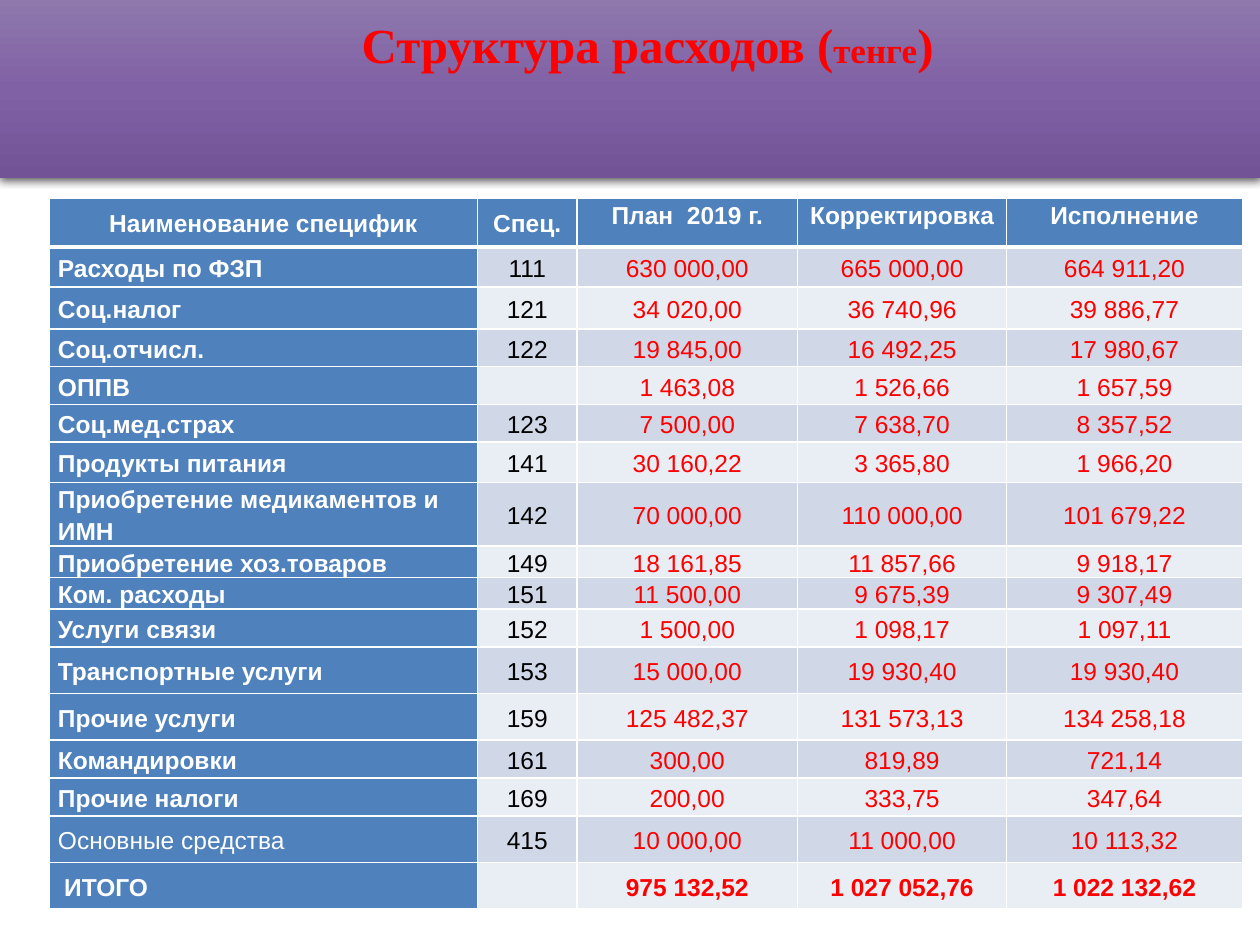
import copy

import pptx
import pptx.dml.color
import pptx.enum.shapes
import pptx.enum.text
import pptx.oxml
import pptx.oxml.ns
import pptx.util
from pptx.util import Inches

RGBColor = pptx.dml.color.RGBColor
PP_ALIGN = pptx.enum.text.PP_ALIGN
MSO_ANCHOR = pptx.enum.text.MSO_ANCHOR

WHITE = RGBColor(0xFF, 0xFF, 0xFF)
BLACK = RGBColor(0x00, 0x00, 0x00)
RED = RGBColor(0xFF, 0x00, 0x00)
BLUE = RGBColor(0x4F, 0x81, 0xBD)
BAND_DARK = RGBColor(0xD0, 0xD8, 0xE8)
BAND_LIGHT = RGBColor(0xE9, 0xED, 0xF4)
BANNER_STOPS = [
    (0, RGBColor(0x8E, 0x78, 0xAC)),
    (0.5, RGBColor(0x80, 0x61, 0xA5)),
    (1, RGBColor(0x71, 0x53, 0x96)),
]

COLUMN_WIDTHS = [3.4, 0.79, 1.75, 1.66, 1.87]
HEADINGS = ["Наименование специфик", "Спец.", "План  2019 г.", "Корректировка", "Исполнение"]
HEADING_HEIGHT = 0.39
TOTAL = "ИТОГО"
PLAIN_NAME = "Основные средства"
EXPENSES = [
    (0.32, "Расходы по ФЗП", "111", "630 000,00", "665 000,00", "664 911,20"),
    (0.33, "Соц.налог", "121", "34 020,00", "36 740,96", "39 886,77"),
    (0.3, "Соц.отчисл.", "122", "19 845,00", "16 492,25", "17 980,67"),
    (0.3, "ОППВ", "", "1 463,08", "1 526,66", "1 657,59"),
    (0.3, "Соц.мед.страх", "123", "7 500,00", "7 638,70", "8 357,52"),
    (0.32, "Продукты питания", "141", "30 160,22", "3 365,80", "1 966,20"),
    (0.38, "Приобретение медикаментов и ИМН", "142", "70 000,00", "110 000,00", "101 679,22"),
    (0.25, "Приобретение хоз.товаров", "149", "18 161,85", "11 857,66", "9 918,17"),
    (0.25, "Ком. расходы", "151", "11 500,00", "9 675,39", "9 307,49"),
    (0.3, "Услуги связи", "152", "1 500,00", "1 098,17", "1 097,11"),
    (0.37, "Транспортные услуги", "153", "15 000,00", "19 930,40", "19 930,40"),
    (0.37, "Прочие услуги", "159", "125 482,37", "131 573,13", "134 258,18"),
    (0.3, "Командировки", "161", "300,00", "819,89", "721,14"),
    (0.3, "Прочие налоги", "169", "200,00", "333,75", "347,64"),
    (0.37, PLAIN_NAME, "415", "10 000,00", "11 000,00", "10 113,32"),
    (0.37, TOTAL, "", "975 132,52", "1 027 052,76", "1 022 132,62"),
]


def apply_format(target, values):
    for attribute, value in values.items():
        setattr(target, attribute, value)


def element(xml):
    return pptx.oxml.parse_xml(xml.replace(">", f" {pptx.oxml.ns.nsdecls('a')}>", 1))


class SlideBuilder:
    title_font = {"name": "Times New Roman", "bold": True}
    table_font = {"name": "Arial", "size": pptx.util.Pt(14)}

    def __init__(self, slide):
        self.slide = slide

    def banner(self, left, top, width, height):
        band = self.slide.shapes.add_shape(
            pptx.enum.shapes.MSO_SHAPE.RECTANGLE,
            Inches(left), Inches(top), Inches(width), Inches(height))
        band.line.fill.background()
        band.fill.gradient()
        band.fill.gradient_angle = 270
        stop_list = band.fill._fill._gradFill.gsLst
        stop_list.insert(1, copy.deepcopy(stop_list[0]))
        for stop, (position, color) in zip(band.fill.gradient_stops, BANNER_STOPS):
            stop.position = position
            stop.color.rgb = color
        band.shadow.inherit = False
        band._element.spPr.find(pptx.oxml.ns.qn("a:effectLst")).append(element(
            '<a:outerShdw blurRad="57150" dist="19050" dir="5400000" algn="ctr" rotWithShape="0">'
            '<a:srgbClr val="000000"><a:alpha val="63000"/></a:srgbClr></a:outerShdw>'))

    def title(self, left, top, width, height, parts):
        frame = self.slide.shapes.add_textbox(
            Inches(left), Inches(top), Inches(width), Inches(height)).text_frame
        apply_format(frame, {"word_wrap": True, "vertical_anchor": MSO_ANCHOR.MIDDLE})
        heading = frame.paragraphs[0]
        apply_format(heading, {"alignment": PP_ALIGN.CENTER, "line_spacing": 0.9})
        for text, size in parts:
            run = heading.add_run()
            run.text = text
            apply_format(run.font, {**self.title_font, "size": pptx.util.Pt(size)})
            run.font.color.rgb = RED

    def borders(self, cell, bottom):
        """Draw white cell borders; only the bottom width, in points, varies."""
        properties = cell._tc.get_or_add_tcPr()
        widths = {"lnL": 1, "lnR": 1, "lnT": 1, "lnB": bottom}
        for index, (side, width) in enumerate(widths.items()):
            properties.insert(index, element(
                f'<a:{side} w="{pptx.util.Pt(width)}"><a:solidFill>'
                f'<a:srgbClr val="{WHITE}"/></a:solidFill></a:{side}>'))

    def cell(self, cell, text, fill, color, bold=False, align=PP_ALIGN.CENTER,
             anchor=MSO_ANCHOR.MIDDLE, margin=0.07, indent=0, bottom=1):
        cell.fill.solid()
        cell.fill.fore_color.rgb = fill
        self.borders(cell, bottom)
        apply_format(cell, {
            "margin_left": Inches(margin + indent), "margin_right": Inches(margin),
            "margin_top": 0, "margin_bottom": 0, "vertical_anchor": anchor})
        paragraph = cell.text_frame.paragraphs[0]
        apply_format(paragraph, {"alignment": align, "line_spacing": 1.15})
        if text:
            paragraph.add_run().text = text
        for font in [paragraph.font] + [run.font for run in paragraph.runs]:
            apply_format(font, {**self.table_font, "bold": bold})
            font.color.rgb = color

    def expense_table(self, left, top):
        heights = [HEADING_HEIGHT] + [expense[0] for expense in EXPENSES]
        table = self.slide.shapes.add_table(
            len(heights), len(COLUMN_WIDTHS), Inches(left), Inches(top),
            Inches(sum(COLUMN_WIDTHS)), Inches(sum(heights))).table
        for column, width in zip(table.columns, COLUMN_WIDTHS):
            column.width = Inches(width)
        for row, height in zip(table.rows, heights):
            row.height = Inches(height)

        for column, heading in enumerate(HEADINGS):
            is_amount = column >= 2
            self.cell(table.cell(0, column), heading, BLUE, WHITE, bold=True, bottom=3,
                      anchor=MSO_ANCHOR.TOP if is_amount else MSO_ANCHOR.MIDDLE,
                      margin=0.05 if is_amount else 0.07)
        for row, (_, name, code, *amounts) in enumerate(EXPENSES, start=1):
            band = BAND_DARK if row % 2 else BAND_LIGHT
            self.cell(table.cell(row, 0), name, BLUE, WHITE, bold=name != PLAIN_NAME,
                      align=PP_ALIGN.LEFT, indent=0.05 if name == TOTAL else 0)
            self.cell(table.cell(row, 1), code, band, BLACK)
            for column, amount in enumerate(amounts, start=2):
                self.cell(table.cell(row, column), amount, band, RED, bold=name == TOTAL)


def main():
    deck = pptx.Presentation()
    apply_format(deck, {"slide_width": Inches(10), "slide_height": Inches(7.5)})
    builder = SlideBuilder(deck.slides.add_slide(deck.slide_layouts[6]))
    builder.banner(0, 0, 10, 1.41)
    builder.expense_table(0.39, 1.57)
    builder.title(0.64, 0.1, 9, 0.55, [("Структура расходов (", 28), ("тенге", 20), (")", 28)])
    deck.save("out.pptx")


if __name__ == "__main__":
    main()
